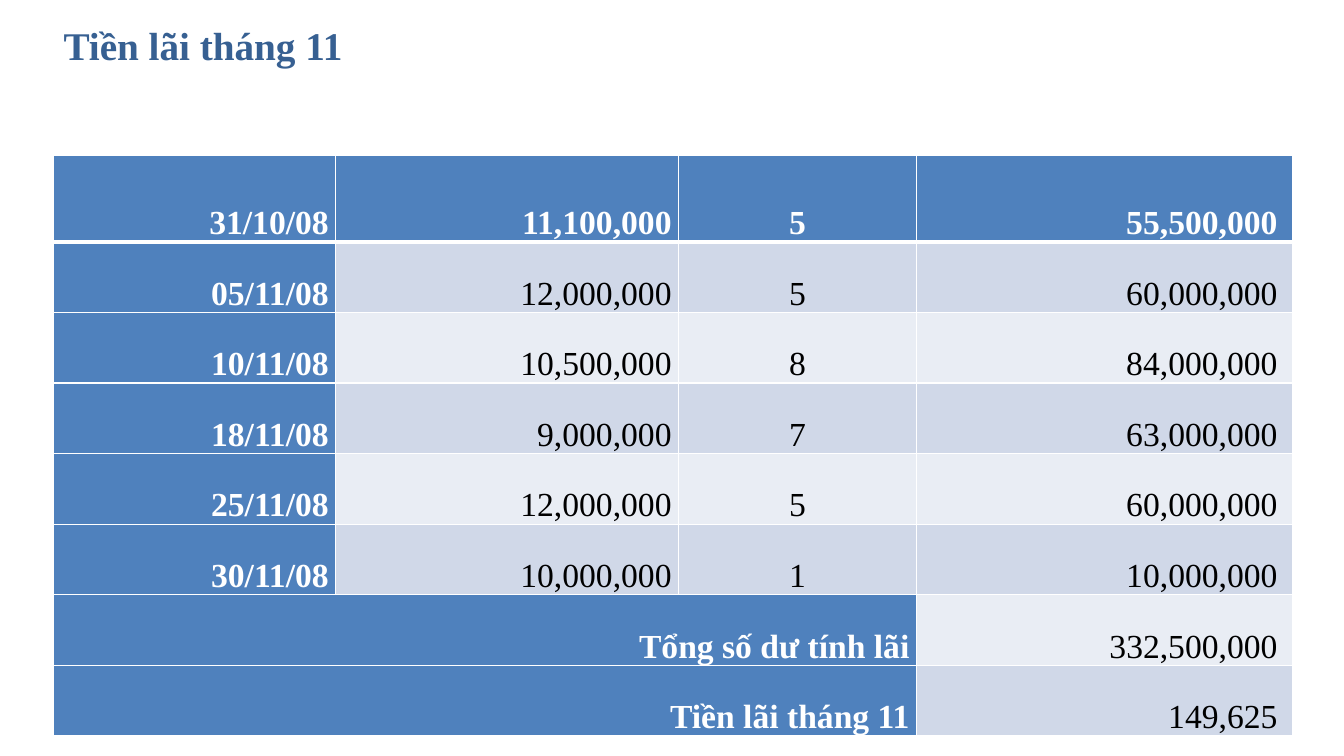
import pptx
import pptx.util
import pptx.dml.color
import pptx.enum.text
import pptx.oxml
import pptx.oxml.ns
from pptx.util import Inches

THEME = {
    "font": "Times New Roman",
    "title": "376092",
    "header": "4F81BD",
    "bands": ("E9EDF4", "D0D8E8"),
    "light": "FFFFFF",
    "dark": "000000",
    "title_size": 28,
    "table_size": 24,
}
RIGHT = pptx.enum.text.PP_ALIGN.RIGHT
CENTER = pptx.enum.text.PP_ALIGN.CENTER


def style_text(paragraph, size, color, bold):
    for run in paragraph.runs:
        run.font.name = THEME["font"]
        run.font.size = pptx.util.Pt(size)
        run.font.bold = bold
        run.font.color.rgb = pptx.dml.color.RGBColor.from_string(color)


def add_border(cell, side, points):
    cell._tc.get_or_add_tcPr().append(pptx.oxml.parse_xml(
        f'<a:{side} {pptx.oxml.ns.nsdecls("a")} w="{pptx.util.Pt(points)}">'
        f'<a:solidFill><a:srgbClr val="{THEME["light"]}"/></a:solidFill></a:{side}>'))


presentation = pptx.Presentation()
presentation.slide_width = Inches(13.33)
presentation.slide_height = Inches(7.5)
slide = presentation.slides.add_slide(presentation.slide_layouts[5])

# Title
title = slide.shapes.title
title.left, title.top = Inches(0.53), Inches(0.03)
title.width, title.height = Inches(12.53), Inches(0.83)
title.text_frame.text = "Tiền lãi tháng 11"
title.text_frame.vertical_anchor = pptx.enum.text.MSO_ANCHOR.MIDDLE
heading = title.text_frame.paragraphs[0]
heading.alignment = pptx.enum.text.PP_ALIGN.LEFT
style_text(heading, THEME["title_size"], THEME["title"], True)

# Balances by date, days held and their product, then the totals
balances = [
    ("31/10/08", "11,100,000", "5", "55,500,000"),
    ("05/11/08", "12,000,000", "5", "60,000,000"),
    ("10/11/08", "10,500,000", "8", "84,000,000"),
    ("18/11/08", "9,000,000", "7", "63,000,000"),
    ("25/11/08", "12,000,000", "5", "60,000,000"),
    ("30/11/08", "10,000,000", "1", "10,000,000"),
    ("Tổng số dư tính lãi", "", "", "332,500,000"),
    ("Tiền lãi tháng 11", "", "", "149,625"),
]
column_widths = (2.8, 3.4, 2.36, 3.73)
interest = slide.shapes.add_table(
    len(balances), len(column_widths),
    Inches(0.53), Inches(1.54), Inches(12.29), Inches(5.76)).table
for column, width in zip(interest.columns, column_widths):
    column.width = Inches(width)
for row_index, row in enumerate(interest.rows):
    row.height = Inches(0.7 if row_index else 0.86)

# Cell text, borders and fills
for row_index, values in enumerate(balances):
    for column_index, value in enumerate(values):
        cell = interest.cell(row_index, column_index)
        is_total_label = not values[1] and column_index < 3
        is_header = row_index == 0 or column_index == 0 or is_total_label
        cell.margin_top = cell.margin_bottom = 0
        cell.margin_left = Inches(0.07)
        cell.margin_right = Inches(0.15 if column_index == 3 else 0.07)
        cell.vertical_anchor = pptx.enum.text.MSO_ANCHOR.BOTTOM
        for side in ("lnL", "lnR", "lnT", "lnB"):
            under_header = (row_index, side) in ((0, "lnB"), (1, "lnT"))
            add_border(cell, side, 3 if under_header else 1)
        cell.fill.solid()
        cell.fill.fore_color.rgb = pptx.dml.color.RGBColor.from_string(
            THEME["header"] if is_header else THEME["bands"][row_index % 2])
        if value:
            cell.text_frame.text = value
            entry = cell.text_frame.paragraphs[0]
            entry.alignment = CENTER if column_index == 2 else RIGHT
            entry.line_spacing = 1.15
            style_text(entry, THEME["table_size"],
                       THEME["light"] if is_header else THEME["dark"], is_header)

# Total labels span the first three columns
for row_index, values in enumerate(balances):
    if not values[1]:
        interest.cell(row_index, 0).merge(interest.cell(row_index, 2))

presentation.save("out.pptx")
